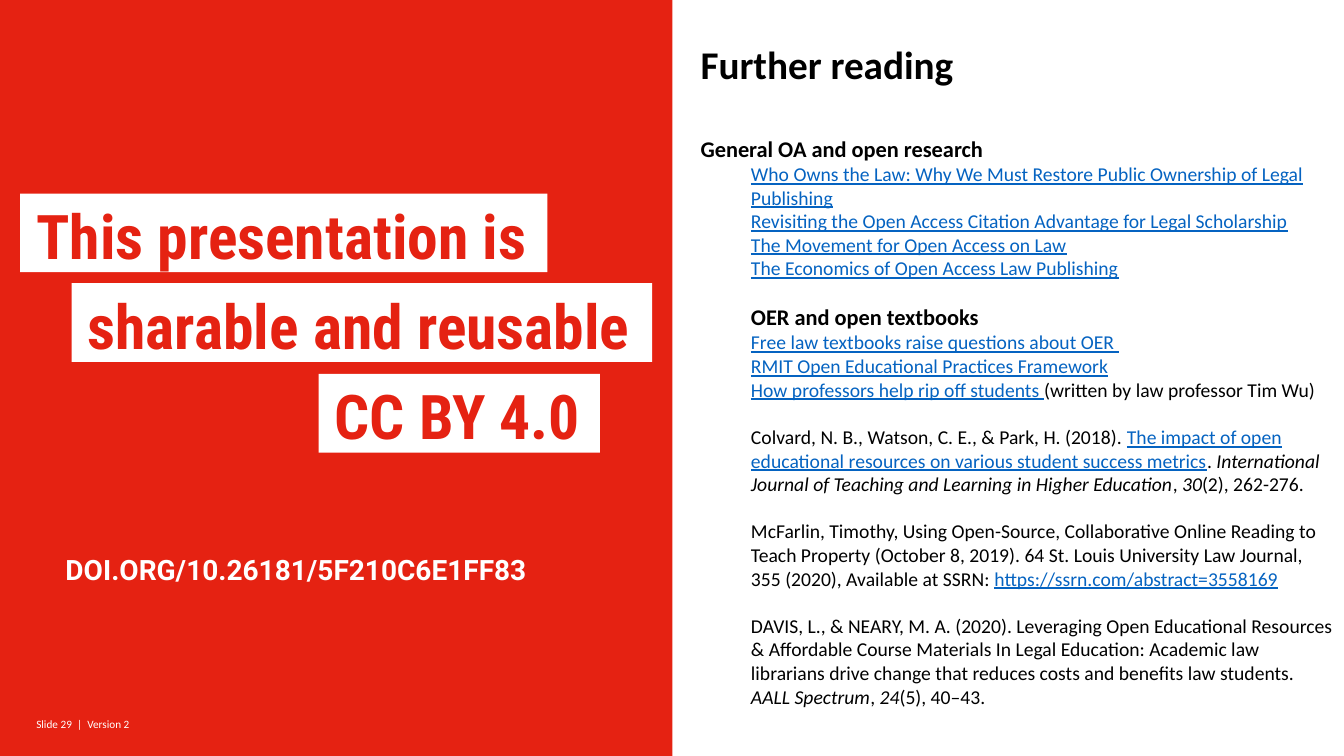
from pptx import Presentation
from pptx.dml.color import RGBColor
from pptx.enum.shapes import MSO_SHAPE
from pptx.enum.text import MSO_ANCHOR, PP_ALIGN
from pptx.util import Inches, Pt

RED = RGBColor(0xE5, 0x22, 0x12)
WHITE = RGBColor(0xFF, 0xFF, 0xFF)
BLACK = RGBColor(0, 0, 0)
BLUE = RGBColor(0x05, 0x63, 0xC1)

# left, top, width, words
LABELS = [
    (0.2, 1.92, 5.23, "This presentation is"),
    (0.71, 2.81, 5.76, "sharable and reusable"),
    (3.16, 3.71, 2.79, "CC BY 4.0"),
]
DOI = "DOI.ORG/10.26181/5F210C6E1FF83"
FOOTER = "Slide 29  |  Version 2"

# Kind of run: size, colour, bold, italic, underline
STYLES = {
    "title": (28, BLACK, True, False, False),
    "head": (16, BLACK, True, False, False),
    "link": (14, BLUE, False, False, True),
    "plain": (14, BLACK, False, False, False),
    "italic": (14, BLACK, False, True, False),
}
LINE = 1.22  # line height of Calibri, in font sizes
GAP, WIDE = 14 * LINE, 28 * LINE

# space before, indent, runs
READING = [
    (0, 0, [("title", "Further reading")]),
    (WIDE, 0, [("head", "General OA and open research")]),
    (0, 0.5, [("link", "Who Owns the Law: Why We Must Restore Public Ownership of Legal Publishing")]),
    (0, 0.5, [("link", "Revisiting the Open Access Citation Advantage for Legal Scholarship")]),
    (0, 0.5, [("link", "The Movement for Open Access on Law")]),
    (0, 0.5, [("link", "The Economics of Open Access Law Publishing")]),
    (GAP, 0.5, [("head", "OER and open textbooks")]),
    (0, 0.5, [("link", "Free law textbooks raise questions about OER ")]),
    (0, 0.5, [("link", "RMIT Open Educational Practices Framework")]),
    (0, 0.5, [("link", "How professors help rip off students "),
              ("plain", "(written by law professor Tim Wu)")]),
    (GAP, 0.5, [
        ("plain", "Colvard, N. B., Watson, C. E., & Park, H. (2018). "),
        ("link", "The impact of open educational resources on various student success metrics"),
        ("plain", ". "),
        ("italic", "International Journal of Teaching and Learning in Higher Education"),
        ("plain", ", "), ("italic", "30"), ("plain", "(2), 262-276.")]),
    (GAP, 0.5, [
        ("plain", "McFarlin, Timothy, Using Open-Source, Collaborative Online Reading to "
                  "Teach Property (October 8, 2019). 64 St. Louis University Law Journal, "
                  "355 (2020), Available at SSRN: "),
        ("link", "https://ssrn.com/abstract=3558169")]),
    (GAP, 0.5, [
        ("plain", "DAVIS, L., & NEARY, M. A. (2020). Leveraging Open Educational Resources "
                  "& Affordable Course Materials In Legal Education: Academic law "
                  "librarians drive change that reduces costs and benefits law students. "),
        ("italic", "AALL Spectrum"),
        ("plain", ", "), ("italic", "24"), ("plain", "(5), 40–43.")]),
]


def add_run(par, text, face, size, color, bold=False, italic=False, under=False):
    run = par.add_run()
    run.text = text
    font = run.font
    font.name, font.size, font.color.rgb = face, Pt(size), color
    font.bold, font.italic, font.underline = bold, italic, under


def set_insets(frame, left, top, right, bottom):
    frame.margin_left, frame.margin_top = Inches(left), Inches(top)
    frame.margin_right, frame.margin_bottom = Inches(right), Inches(bottom)


def add_rect(slide, left, top, width, height, color):
    rect = slide.shapes.add_shape(MSO_SHAPE.RECTANGLE, Inches(left), Inches(top),
                                  Inches(width), Inches(height))
    rect.shadow.inherit = False
    rect.fill.solid()
    rect.fill.fore_color.rgb = color
    rect.line.fill.background()
    return rect


def add_text(slide, left, top, width, height, insets):
    box = slide.shapes.add_textbox(Inches(left), Inches(top),
                                   Inches(width), Inches(height))
    frame = box.text_frame
    frame.word_wrap = True
    set_insets(frame, *insets)
    return frame


def main():
    deck = Presentation()
    deck.slide_width, deck.slide_height = Inches(13.33), Inches(7.5)
    slide = deck.slides.add_slide(deck.slide_layouts[6])

    add_rect(slide, 0, 0, 6.67, 7.5, RED)
    footer = add_text(slide, 0.36, 7.07, 2.69, 0.24, (0, 0.05, 0.1, 0.05))
    add_run(footer.paragraphs[0], FOOTER, "Calibri", 8, WHITE)

    frame = add_text(slide, 6.85, 0.35, 6.48, 7.3, (0.1, 0.05, 0.1, 0.05))
    for i, (before, indent, runs) in enumerate(READING):
        par = frame.add_paragraph() if i else frame.paragraphs[0]
        if before:
            par.space_before = Pt(before)
        if indent:
            props = par._p.get_or_add_pPr()
            props.set("marL", str(Inches(indent)))
            props.set("indent", "0")
        for kind, text in runs:
            add_run(par, text, "Calibri", *STYLES[kind])

    for left, top, width, words in LABELS:
        frame = add_rect(slide, left, top, width, 0.78, WHITE).text_frame
        frame.word_wrap = False
        frame.vertical_anchor = MSO_ANCHOR.MIDDLE
        set_insets(frame, 0.16, 0.04, 0.16, 0)
        par = frame.paragraphs[0]
        par.alignment = PP_ALIGN.LEFT
        add_run(par, words, "Roboto Condensed", 44, RED, True)

    par = add_text(slide, 0.65, 5.55, 5.5, 0.84, (0, 0, 0, 0)).paragraphs[0]
    par.line_spacing = Pt(19)
    add_run(par, DOI, "Roboto", 20, WHITE, True)

    deck.save("out.pptx")


if __name__ == "__main__":
    main()
